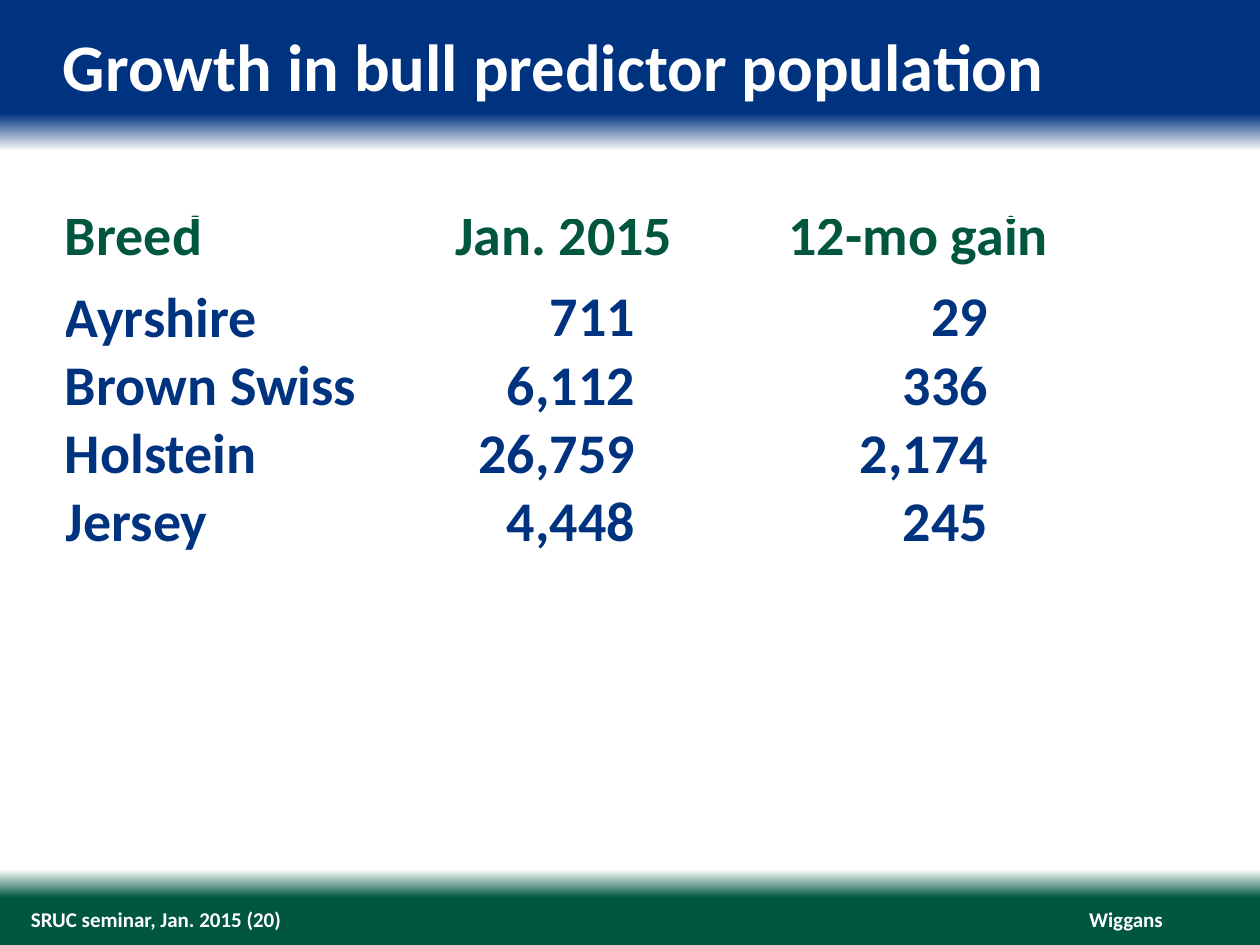
"""Build the slide on growth in the bull predictor population."""
from dataclasses import dataclass

from lxml.etree import SubElement
from pptx import Presentation
from pptx.dml.color import RGBColor
from pptx.enum.text import MSO_ANCHOR as Anchor, PP_ALIGN as Align
from pptx.oxml.ns import qn
from pptx.util import Pt


@dataclass(frozen=True)
class Theme:
    font: str = "Calibri"
    blue: str = "00337F"
    green: str = "00563F"
    white: str = "FFFFFF"
    title_size: int = 38
    table_size: int = 32
    footer_size: int = 12


THEME = Theme()
WIDTH, HEIGHT = 1260, 945

BACKGROUND = [(0, THEME.blue), (12, THEME.blue), (16, THEME.white),
              (92, THEME.white), (95, THEME.green), (100, THEME.green)]

TEXTS = [
    ("Wiggans", (1089, 907, 74, 25), THEME.footer_size, Align.RIGHT, Anchor.MIDDLE, False),
    ("SRUC seminar, Jan. 2015 (20)", (31, 907, 935, 25), THEME.footer_size,
     Align.LEFT, Anchor.MIDDLE, True),
    ("Growth in bull predictor population", (63, 25, 1134, 81), THEME.title_size,
     Align.LEFT, Anchor.TOP, True),
]

ROWS = [
    ("Breed", "Jan. 2015", "12-mo gain"),
    ("Ayrshire", "711", "29"),
    ("Brown Swiss", "6,112", "336"),
    ("Holstein", "26,759", "2,174"),
    ("Jersey", "4,448", "245"),
]
TABLE_LEFT, TABLE_TOP = 65, 218
COLUMN_WIDTHS = (296, 425, 265)
HEADER_HEIGHT, ROW_HEIGHT, FIRST_ROW_GAP = 53, 68, 13
HEADER_INSETS = (0, 19, 0)
NUMBER_INSETS = (0, 151, 63)


def px(length):
    return round(length * 914400 / 126)


def set_insets(target, left=0, top=0, right=0, bottom=0):
    sides = {"left": left, "top": top, "right": right, "bottom": bottom}
    for side, length in sides.items():
        setattr(target, f"margin_{side}", px(length))


def write(paragraph, text, size, color, align):
    paragraph.alignment = align
    run = paragraph.add_run()
    run.text = text
    font_format = {"name": THEME.font, "size": Pt(size), "bold": True}
    for name, value in font_format.items():
        setattr(run.font, name, value)
    run.font.color.rgb = RGBColor.from_string(color)


def paint_background(slide):
    fill = slide.background.fill
    fill.gradient()
    fill.gradient_angle = 270
    stops = slide.element.find(".//" + qn("a:gsLst"))
    for stop in list(stops):
        stops.remove(stop)
    for percent, color in BACKGROUND:
        stop = SubElement(stops, qn("a:gs"), pos=str(percent * 1000))
        SubElement(stop, qn("a:srgbClr"), val=color)


def add_text(slide, text, box, size, align, anchor, wrap):
    frame = slide.shapes.add_textbox(*map(px, box)).text_frame
    frame.word_wrap = wrap
    frame.vertical_anchor = anchor
    set_insets(frame)
    write(frame.paragraphs[0], text, size, THEME.white, align)


def add_breed_table(slide):
    heights = [HEADER_HEIGHT, ROW_HEIGHT + FIRST_ROW_GAP] + [ROW_HEIGHT] * (len(ROWS) - 2)
    box = (TABLE_LEFT, TABLE_TOP, sum(COLUMN_WIDTHS), sum(heights))
    table = slide.shapes.add_table(len(ROWS), len(COLUMN_WIDTHS), *map(px, box)).table
    table.first_row = table.horz_banding = False
    for column, width in zip(table.columns, COLUMN_WIDTHS):
        column.width = px(width)
    for row, height in zip(table.rows, heights):
        row.height = px(height)
    for row_index, texts in enumerate(ROWS):
        header = row_index == 0
        insets = HEADER_INSETS if header else NUMBER_INSETS
        color = THEME.green if header else THEME.blue
        for column_index, text in enumerate(texts):
            cell = table.cell(row_index, column_index)
            cell.fill.background()
            cell.vertical_anchor = Anchor.BOTTOM
            top = FIRST_ROW_GAP if (row_index, column_index) == (1, 0) else 0
            set_insets(cell, top=top, right=insets[column_index])
            align = Align.LEFT
            if column_index:
                align = Align.CENTER if header else Align.RIGHT
            paragraph = cell.text_frame.paragraphs[0]
            if header:
                paragraph.line_spacing = Pt(30)
            write(paragraph, text, THEME.table_size, color, align)


def main():
    presentation = Presentation()
    presentation.slide_width, presentation.slide_height = px(WIDTH), px(HEIGHT)
    slide = presentation.slides.add_slide(presentation.slide_layouts[6])
    paint_background(slide)
    for text in TEXTS:
        add_text(slide, *text)
    add_breed_table(slide)
    presentation.save("out.pptx")


if __name__ == "__main__":
    main()
